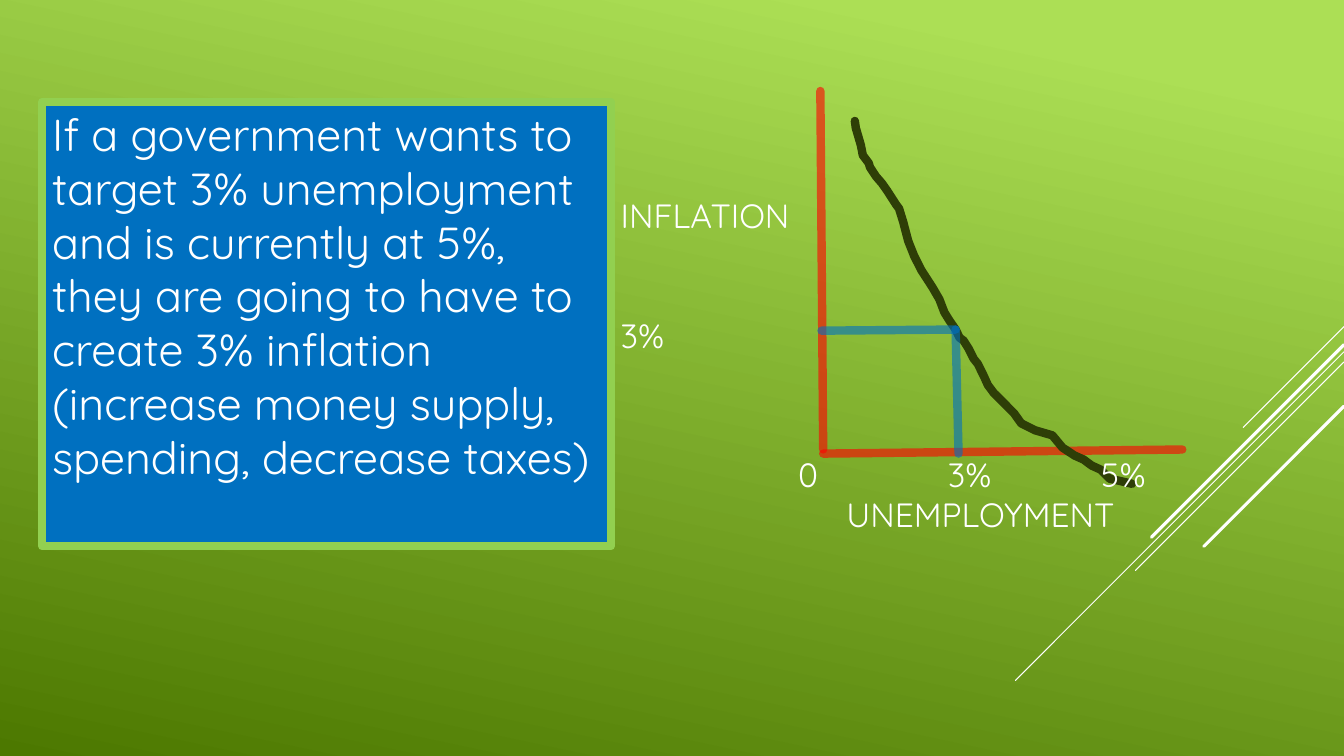
from pptx import Presentation
from pptx.dml.color import RGBColor
from pptx.enum.shapes import MSO_CONNECTOR, MSO_SHAPE
from pptx.enum.text import MSO_ANCHOR, PP_ALIGN
from pptx.oxml.ns import qn
from pptx.util import Pt
from lxml.etree import SubElement

COLORS = {
    "light": "ACDF55",
    "dark": "4C7800",
    "text": "FFFFFF",
    "axis": "FF0000",
    "curve": "2E3E07",
    "target": "0070C0",
    "border": "92D050",
}
SLIDE_WIDTH, SLIDE_HEIGHT = 960, 540

STRIPES = [(233.3, 72, 0.75), (251.3, 234.7, 0.75), (258.5, 149, 0.75),
           (246.2, 137.5, 2.25), (290.2, 100.1, 2.25)]

AXES = [((586, 65), (588, 321)), ((588, 324), (844.5, 321.1))]

TARGET_POINT = (682.6, 235.4)
TARGET_LINES = [((684.7, 324), TARGET_POINT), (TARGET_POINT, (586.8, 236.2))]

PHILLIPS_CURVE = [
    (610.6, 86.4), (611.3, 91.4), (614.9, 103.7), (616.3, 110.9), (620.6, 116.6),
    (621.4, 119.5), (625.7, 126), (630, 131), (633.6, 136.1), (640.1, 146.2),
    (642.2, 149), (645.1, 158.4), (648.7, 172.1), (653, 182.9), (658.1, 193),
    (666, 205.2), (671, 213.8), (674.6, 223.2), (678.2, 229), TARGET_POINT,
    (685.4, 241.2), (688.3, 243.4), (691.9, 249.1), (695.5, 256.3), (698.4, 259.9),
    (702.7, 268.6), (705.6, 275), (709.9, 280.8), (715, 285.8), (720, 290.9),
    (724.3, 295.2), (729.4, 302.4), (739.4, 307.4), (751.7, 311), (758.9, 319.7),
    (767.5, 325.4), (774, 328.3), (779.8, 332.6), (786.2, 335.5), (792.7, 342),
    (799.2, 343.4), (808.6, 345.6),
]

LABELS = [("0", 563, 321, 40), ("3%", 670, 321, 60), ("5%", 779.5, 321, 60),
          ("UNEMPLOYMENT", 597.5, 349.5, 230),
          ("INFLATION", 436.3, 135.5, 140), ("3%", 436.3, 221.5, 60)]

STATEMENT = ("If a government wants to target 3% unemployment and is currently at 5%, "
             "they are going to have to create 3% inflation "
             "(increase money supply, spending, decrease taxes)")


class SlideBuilder:
    font = "Quicksand"
    pen_width = 6

    def __init__(self, slide):
        self.slide = slide

    def color(self, name):
        return RGBColor.from_string(COLORS[name])

    def background(self, first, last, angle):
        fill = self.slide.background.fill
        fill.gradient()
        fill.gradient_angle = angle
        for stop, position, name in zip(fill.gradient_stops, (0.1, 1), (first, last)):
            stop.position = position
            stop.color.rgb = self.color(name)

    def stroke(self, shape, name, width, opacity=100):
        line = shape.line
        line.width = Pt(width)
        line.fill.solid()
        line.fill.fore_color.rgb = self.color(name)
        outline = shape._element.spPr.find(qn("a:ln"))
        outline.set("cap", "rnd")
        if opacity < 100:
            color_element = outline.find(qn("a:solidFill"))[0]
            SubElement(color_element, qn("a:alpha"), val=str(opacity * 1000))
        SubElement(outline, qn("a:round"))

    def line(self, start, end, name, width=pen_width, opacity=100):
        connector = self.slide.shapes.add_connector(
            MSO_CONNECTOR.STRAIGHT, *[Pt(value) for value in (*start, *end)])
        self.stroke(connector, name, width, opacity)
        SubElement(connector._element.spPr, qn("a:effectLst"))

    def curve(self, points, name):
        vertices = [(Pt(x), Pt(y)) for x, y in points]
        builder = self.slide.shapes.build_freeform(*vertices[0])
        builder.add_line_segments(vertices[1:], close=False)
        shape = builder.convert_to_shape()
        shape.shadow.inherit = False
        shape.fill.background()
        self.stroke(shape, name, self.pen_width)

    def add_text(self, shape, text, size):
        frame = shape.text_frame
        frame.word_wrap = True
        frame.vertical_anchor = MSO_ANCHOR.TOP
        paragraph = frame.paragraphs[0]
        paragraph.alignment = PP_ALIGN.LEFT
        run = paragraph.add_run()
        run.text = text
        run.font.name = self.font
        run.font.size = Pt(size)
        run.font.color.rgb = self.color("text")

    def label(self, text, left, top, width):
        shape = self.slide.shapes.add_textbox(Pt(left), Pt(top), Pt(width), Pt(36))
        self.add_text(shape, text, 24)

    def panel(self, text, left, top, width, height):
        shape = self.slide.shapes.add_shape(
            MSO_SHAPE.RECTANGLE, Pt(left), Pt(top), Pt(width), Pt(height))
        shape.shadow.inherit = False
        shape.fill.solid()
        shape.fill.fore_color.rgb = self.color("target")
        self.stroke(shape, "border", self.pen_width)
        self.add_text(shape, text, 32)


def main():
    presentation = Presentation()
    presentation.slide_width = Pt(SLIDE_WIDTH)
    presentation.slide_height = Pt(SLIDE_HEIGHT)
    builder = SlideBuilder(presentation.slides.add_slide(presentation.slide_layouts[6]))

    builder.background("light", "dark", 258)
    for top, drop, width in STRIPES:
        builder.line((SLIDE_WIDTH, top), (SLIDE_WIDTH - drop, top + drop), "text", width)
    for start, end in AXES:
        builder.line(start, end, "axis", opacity=60)
    builder.curve(PHILLIPS_CURVE, "curve")
    for start, end in TARGET_LINES:
        builder.line(start, end, "target", opacity=60)
    for label in LABELS:
        builder.label(*label)
    builder.panel(STATEMENT, 30.2, 72.7, 406.1, 317.5)

    presentation.save("out.pptx")


if __name__ == "__main__":
    main()
